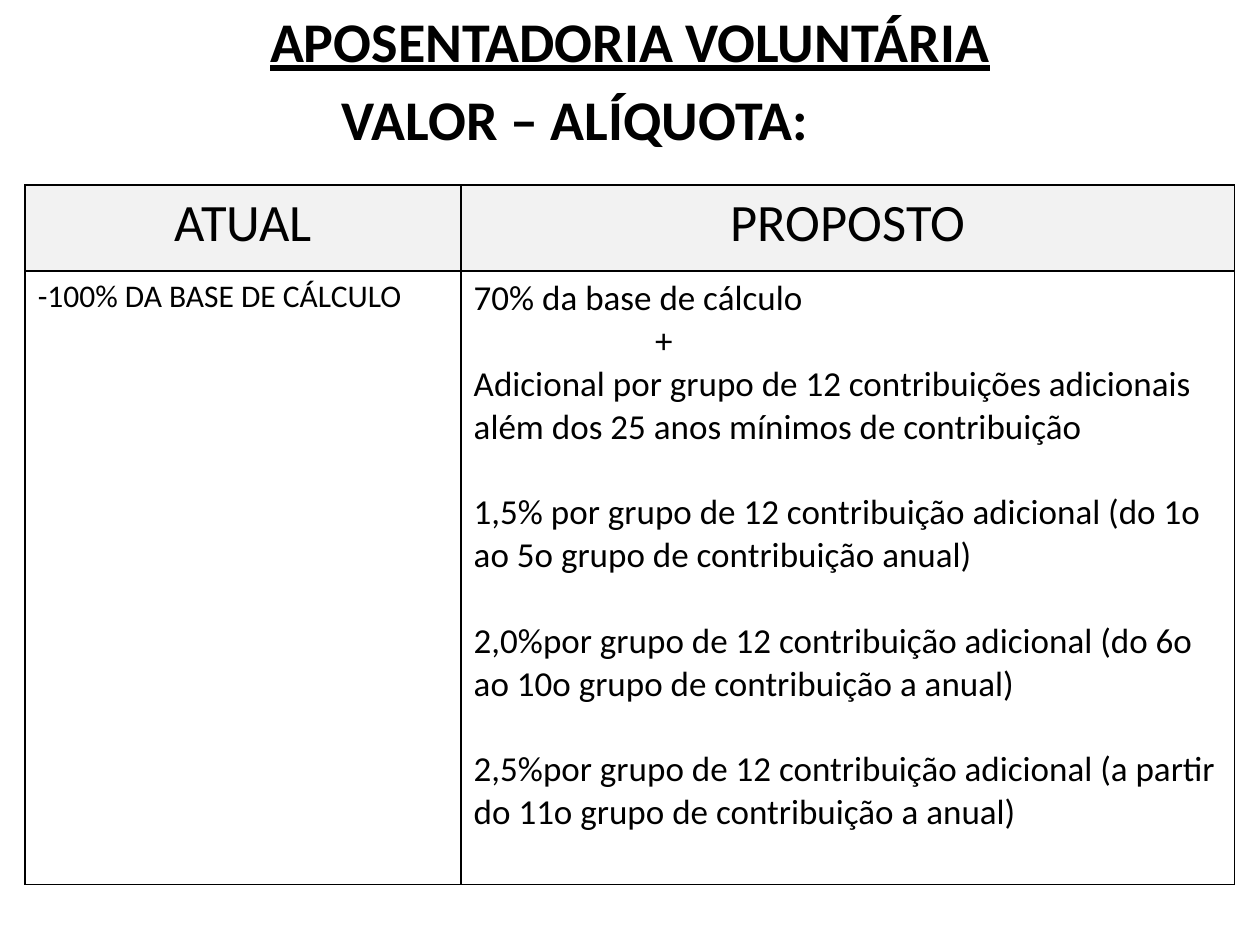
from lxml.etree import SubElement
from pptx import Presentation
from pptx.dml.color import RGBColor
from pptx.enum.text import MSO_ANCHOR, MSO_AUTO_SIZE, PP_ALIGN
from pptx.oxml.ns import qn
from pptx.util import Inches, Pt

COLORS = {"text": "000000", "border": "000000", "header": "F2F2F2", "body": "FFFFFF"}
FONT = "Calibri"

# Content: paragraphs are (text, left indent in inches, space before in points)
TITLE = "APOSENTADORIA VOLUNTÁRIA"
SUBTITLE = "VALOR – ALÍQUOTA:"
SUBTITLE_INDENT = 2.61
HEADERS = ["ATUAL", "PROPOSTO"]
GAP = 24.4  # one line of 20 pt text
CURRENT = [("-100% DA BASE DE CÁLCULO", 0, 0)]
PROPOSED = [
    ("70% da base de cálculo", 0, 0),
    ("+", 1.44, 0),
    ("Adicional por grupo de 12 contribuições adicionais além dos 25 anos mínimos de contribuição", 0, 0),
    ("1,5% por grupo de 12 contribuição adicional (do 1o ao 5o grupo de contribuição anual)", 0, GAP),
    ("2,0%por grupo de 12 contribuição adicional (do 6o ao 10o grupo de contribuição a anual)", 0, GAP),
    ("2,5%por grupo de 12 contribuição adicional (a partir do 11o grupo de contribuição a anual)", 0, GAP),
]
COL_WIDTHS = [3.46, 6.14]
ROW_HEIGHTS = [0.68, 4.87]


def rgb(name):
    return RGBColor.from_string(COLORS[name])


def add_paragraph(tf, first, text, size, align=PP_ALIGN.LEFT, indent=0, before=0,
                  bold=False, underline=False):
    p = tf.paragraphs[0] if first else tf.add_paragraph()
    p.alignment = align
    p.space_before = Pt(before)
    if indent:
        pPr = p._p.get_or_add_pPr()
        pPr.set("marL", str(Inches(indent)))
        pPr.set("indent", "0")
    r = p.add_run()
    r.text = text
    r.font.name, r.font.size = FONT, Pt(size)
    r.font.bold, r.font.underline = bold, underline
    r.font.color.rgb = rgb("text")


def format_cell(cell, fill):
    # Borders come before the fill in the cell properties
    tcPr = cell._tc.get_or_add_tcPr()
    for side in ("lnL", "lnR", "lnT", "lnB"):
        ln = SubElement(tcPr, qn(f"a:{side}"), w=str(Pt(1)))
        SubElement(SubElement(ln, qn("a:solidFill")), qn("a:srgbClr"), val=COLORS["border"])
    cell.fill.solid()
    cell.fill.fore_color.rgb = rgb(fill)


prs = Presentation()
prs.slide_width, prs.slide_height = Inches(10), Inches(7.5)
s = prs.slides.add_slide(prs.slide_layouts[5])

# Heading
title = s.shapes.title
title.left, title.top = Inches(0), Inches(0)
title.width, title.height = Inches(10), Inches(7.37)
tf = title.text_frame
tf.auto_size = MSO_AUTO_SIZE.NONE
tf.vertical_anchor = MSO_ANCHOR.TOP
add_paragraph(tf, True, TITLE, 32, PP_ALIGN.CENTER, bold=True, underline=True)
add_paragraph(tf, False, SUBTITLE, 32, indent=SUBTITLE_INDENT, before=6.4, bold=True)

# Comparison table
table = s.shapes.add_table(2, 2, Inches(0.2), Inches(1.47), Inches(sum(COL_WIDTHS)),
                           Inches(sum(ROW_HEIGHTS))).table
for col, width in zip(table.columns, COL_WIDTHS):
    col.width = Inches(width)
for row, height in zip(table.rows, ROW_HEIGHTS):
    row.height = Inches(height)

for c, (header, paragraphs, size) in enumerate(zip(HEADERS, [CURRENT, PROPOSED], [18, 20])):
    head, body = table.cell(0, c), table.cell(1, c)
    format_cell(head, "header")
    format_cell(body, "body")
    add_paragraph(head.text_frame, True, header, 30, PP_ALIGN.CENTER)
    for i, (text, indent, before) in enumerate(paragraphs):
        add_paragraph(body.text_frame, i == 0, text, size, indent=indent, before=before)

prs.save("out.pptx")
